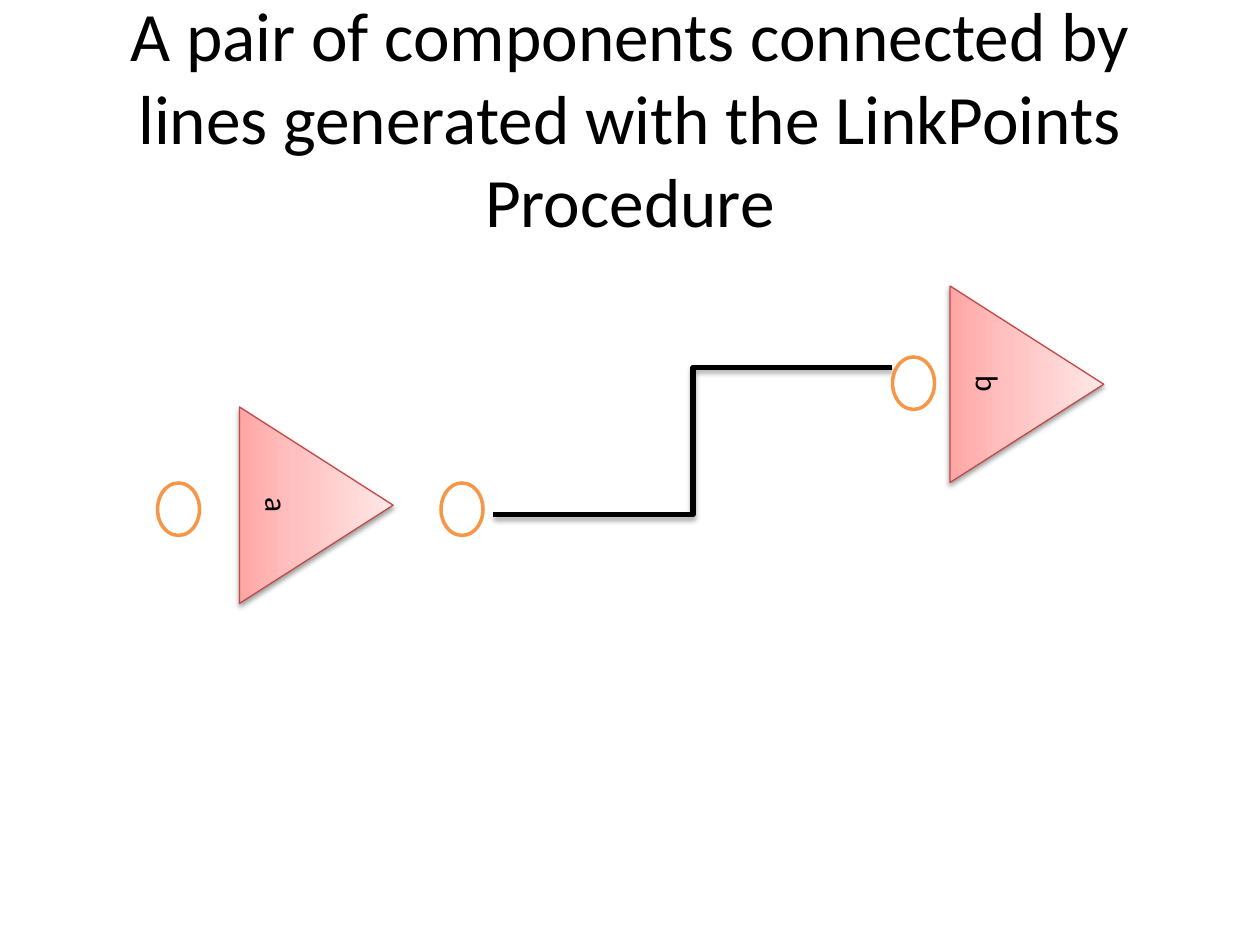
"""Draw two triangular components joined by an elbow link between their ports."""
from dataclasses import dataclass

from lxml.etree import SubElement
from pptx import Presentation
from pptx.dml.color import RGBColor
from pptx.enum.shapes import MSO_CONNECTOR, MSO_SHAPE
from pptx.enum.text import MSO_ANCHOR, MSO_AUTO_SIZE, PP_ALIGN
from pptx.oxml import parse_xml
from pptx.oxml.ns import nsdecls, qn
from pptx.util import Inches, Length, Pt


@dataclass(frozen=True)
class Theme:
    font: str = "Calibri"
    text: str = "000000"
    background: str = "FFFFFF"
    component_line: str = "BF4C48"
    port_line: str = "F79646"
    gradient: tuple = ((0, "FFA6A5"), (35, "FFC0BF"), (100, "FFE7E7"))
    title_size: float = 39.6
    label_size: float = 18
    component_width: float = 0.75
    port_width: float = 2
    link_width: float = 3


@dataclass(frozen=True)
class Component:
    label: str
    column: float
    row: float


@dataclass(frozen=True)
class Port:
    column: float
    row: float


THEME = Theme()
CELLS_PER_INCH = 12
COMPONENT_SIZE = (18.72, 14.64)
PORT_SIZE = (4, 5)
COMPONENTS = (Component("a", 20.76, 40.8), Component("b", 88.44, 29.28))
PORTS = (Port(42, 46), Port(85, 34), Port(15, 46))
LINK = (47, 49, 85, 35)


def grid(cells: float) -> Length:
    """Turn a count of grid cells into a length."""
    return Inches(cells / CELLS_PER_INCH)


def format_text(text_frame, text: str, size: float) -> None:
    """Set centred text in the theme font."""
    text_frame.text = text
    text_frame.word_wrap = True
    text_frame.vertical_anchor = MSO_ANCHOR.MIDDLE
    paragraph = text_frame.paragraphs[0]
    paragraph.alignment = PP_ALIGN.CENTER
    font = paragraph.runs[0].font
    font.name, font.size = THEME.font, Pt(size)
    font.color.rgb = RGBColor.from_string(THEME.text)


def format_line(line, color: str, width: float) -> None:
    """Set the colour and width of a line."""
    line.color.rgb = RGBColor.from_string(color)
    line.width = Pt(width)


def add_shadow(properties, distance: float, opacity: int) -> None:
    """Append a soft shadow that falls straight down."""
    effects = SubElement(properties, qn("a:effectLst"))
    shadow = SubElement(effects, qn("a:outerShdw"), blurRad=str(Pt(3.1)),
                        dist=str(Pt(distance)), dir="5400000", rotWithShape="0")
    color = SubElement(shadow, qn("a:srgbClr"), val=THEME.text)
    SubElement(color, qn("a:alpha"), val=str(opacity * 1000))


def add_gradient(properties) -> None:
    """Fill a shape from its base to its apex."""
    stops = "".join(
        f'<a:gs pos="{position * 1000}"><a:srgbClr val="{color}"/></a:gs>'
        for position, color in THEME.gradient)
    properties.find(qn("a:prstGeom")).addnext(parse_xml(
        f'<a:gradFill {nsdecls("a")} rotWithShape="1"><a:gsLst>{stops}</a:gsLst>'
        '<a:lin ang="16200000" scaled="0"/></a:gradFill>'))


def add_component(slide, component: Component) -> None:
    """Draw a labelled triangle that points right."""
    shape = slide.shapes.add_shape(
        MSO_SHAPE.ISOSCELES_TRIANGLE, grid(component.column), grid(component.row),
        *map(grid, COMPONENT_SIZE))
    shape.rotation = 90
    add_gradient(shape._element.spPr)
    format_line(shape.line, THEME.component_line, THEME.component_width)
    add_shadow(shape._element.spPr, 1.6, 38)
    format_text(shape.text_frame, component.label, THEME.label_size)


def add_port(slide, port: Port) -> None:
    """Draw a port as an outlined ellipse."""
    shape = slide.shapes.add_shape(
        MSO_SHAPE.OVAL, grid(port.column), grid(port.row), *map(grid, PORT_SIZE))
    shape.shadow.inherit = False
    shape.fill.solid()
    shape.fill.fore_color.rgb = RGBColor.from_string(THEME.background)
    format_line(shape.line, THEME.port_line, THEME.port_width)


def add_link(slide) -> None:
    """Draw the elbow link between the components."""
    connector = slide.shapes.add_connector(MSO_CONNECTOR.ELBOW, *map(grid, LINK))
    format_line(connector.line, THEME.text, THEME.link_width)
    add_shadow(connector._element.spPr, 1.8, 35)


def add_title(slide, text: str) -> None:
    """Place and format the title placeholder."""
    title = slide.shapes.title
    title.left, title.top, title.width, title.height = map(Inches, (0.5, 0.3, 9, 1.25))
    format_text(title.text_frame, text, THEME.title_size)
    title.text_frame.auto_size = MSO_AUTO_SIZE.NONE


def main() -> None:
    """Build and save the slide."""
    presentation = Presentation()
    presentation.slide_width, presentation.slide_height = Inches(10), Inches(7.5)
    slide = presentation.slides.add_slide(presentation.slide_layouts[5])
    add_title(slide, "A pair of components connected by lines generated "
                     "with the LinkPoints Procedure")
    for component in COMPONENTS:
        add_component(slide, component)
    add_link(slide)
    for port in PORTS:
        add_port(slide, port)
    presentation.save("out.pptx")


if __name__ == "__main__":
    main()
